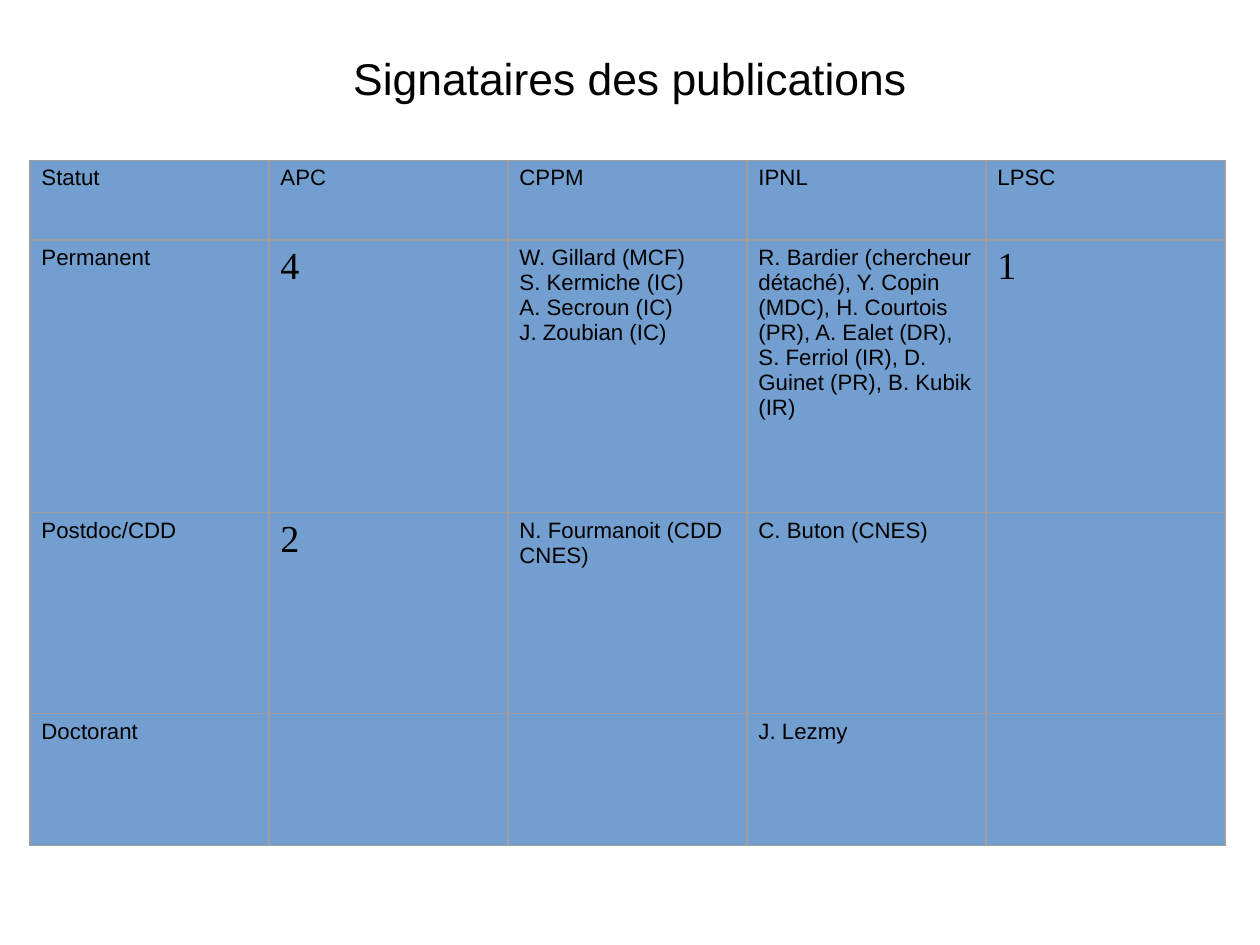
from dataclasses import dataclass

from lxml import etree
from pptx import Presentation
from pptx.dml.color import RGBColor
from pptx.enum.text import MSO_ANCHOR, PP_ALIGN
from pptx.oxml.ns import qn
from pptx.util import Emu, Pt

CENTER, LEFT = PP_ALIGN.CENTER, PP_ALIGN.LEFT
TOP = MSO_ANCHOR.TOP
PX = 8000
BLANK = 6


@dataclass(frozen=True)
class Theme:
    """Colours, fonts and type sizes of the slide."""
    text: str = "000000"
    cell: str = "729FCF"
    border: str = "9E9E9E"
    border_pt: float = 0.75
    font: str = "Arial"
    count_font: str = "Times New Roman"
    title: int = 28
    body: int = 14
    count: int = 24


THEME = Theme()
COL_WIDTH = 239
ROW_HEIGHTS = [80, 273, 201, 132]
ROWS = [
    ["Statut", "APC", "CPPM", "IPNL", "LPSC"],
    ["Permanent", "4",
     "W. Gillard (MCF)\nS. Kermiche (IC)\nA. Secroun (IC)\nJ. Zoubian (IC)",
     "R. Bardier (chercheur détaché), Y. Copin (MDC), H. Courtois (PR), "
     "A. Ealet (DR), S. Ferriol (IR), D. Guinet (PR), B. Kubik (IR)", "1"],
    ["Postdoc/CDD", "2", "N. Fourmanoit (CDD CNES)", "C. Buton (CNES)", ""],
    ["Doctorant", "", "", "J. Lezmy", ""],
]


def px(n):
    """Convert pixels to EMU."""
    return Emu(n * PX)


def write(tf, text, size=THEME.body, font=THEME.font, align=LEFT):
    """Write one formatted paragraph per line of text."""
    tf.word_wrap = True
    for i, line in enumerate(text.split("\n")):
        p = tf.add_paragraph() if i else tf.paragraphs[0]
        p.alignment = align
        r = p.add_run()
        r.text = line
        r.font.size = Pt(size)
        r.font.name = font
        r.font.color.rgb = RGBColor.from_string(THEME.text)


def add_title(s, text, x, y, w, h):
    """Add the centred slide title."""
    tf = s.shapes.add_textbox(px(x), px(y), px(w), px(h)).text_frame
    tf.vertical_anchor = TOP
    tf.margin_top = tf.margin_bottom = px(11)
    write(tf, text, size=THEME.title, align=CENTER)


def set_borders(cell):
    """Draw a thin line on all four sides of a cell."""
    tc_pr = cell._tc.get_or_add_tcPr()
    for i, side in enumerate("LRTB"):
        ln = etree.Element(qn(f"a:ln{side}"), w=str(Pt(THEME.border_pt)))
        fill = etree.SubElement(ln, qn("a:solidFill"))
        etree.SubElement(fill, qn("a:srgbClr"), val=THEME.border)
        tc_pr.insert(i, ln)


def fill_cell(cell, text):
    """Colour a cell and write its text, with counts set larger."""
    cell.fill.solid()
    cell.fill.fore_color.rgb = RGBColor.from_string(THEME.cell)
    set_borders(cell)
    if text.isdigit():
        write(cell.text_frame, text, size=THEME.count, font=THEME.count_font)
    elif text:
        write(cell.text_frame, text)


def add_signatories(s, x, y):
    """Add the table of signatories by status and laboratory."""
    n_cols = len(ROWS[0])
    table = s.shapes.add_table(len(ROWS), n_cols, px(x), px(y),
                               px(COL_WIDTH * n_cols),
                               px(sum(ROW_HEIGHTS))).table
    table.horz_banding = False
    table.first_row = False
    for col in table.columns:
        col.width = px(COL_WIDTH)
    for row, height, texts in zip(table.rows, ROW_HEIGHTS, ROWS):
        row.height = px(height)
        for cell, text in zip(row.cells, texts):
            fill_cell(cell, text)


def main():
    """Build and save the slide."""
    prs = Presentation()
    prs.slide_width, prs.slide_height = px(1260), px(945)
    s = prs.slides.add_slide(prs.slide_layouts[BLANK])
    add_title(s, "Signataires des publications", 43, 40, 1173, 104)
    add_signatories(s, 30, 160)
    prs.save("out.pptx")


if __name__ == "__main__":
    main()
